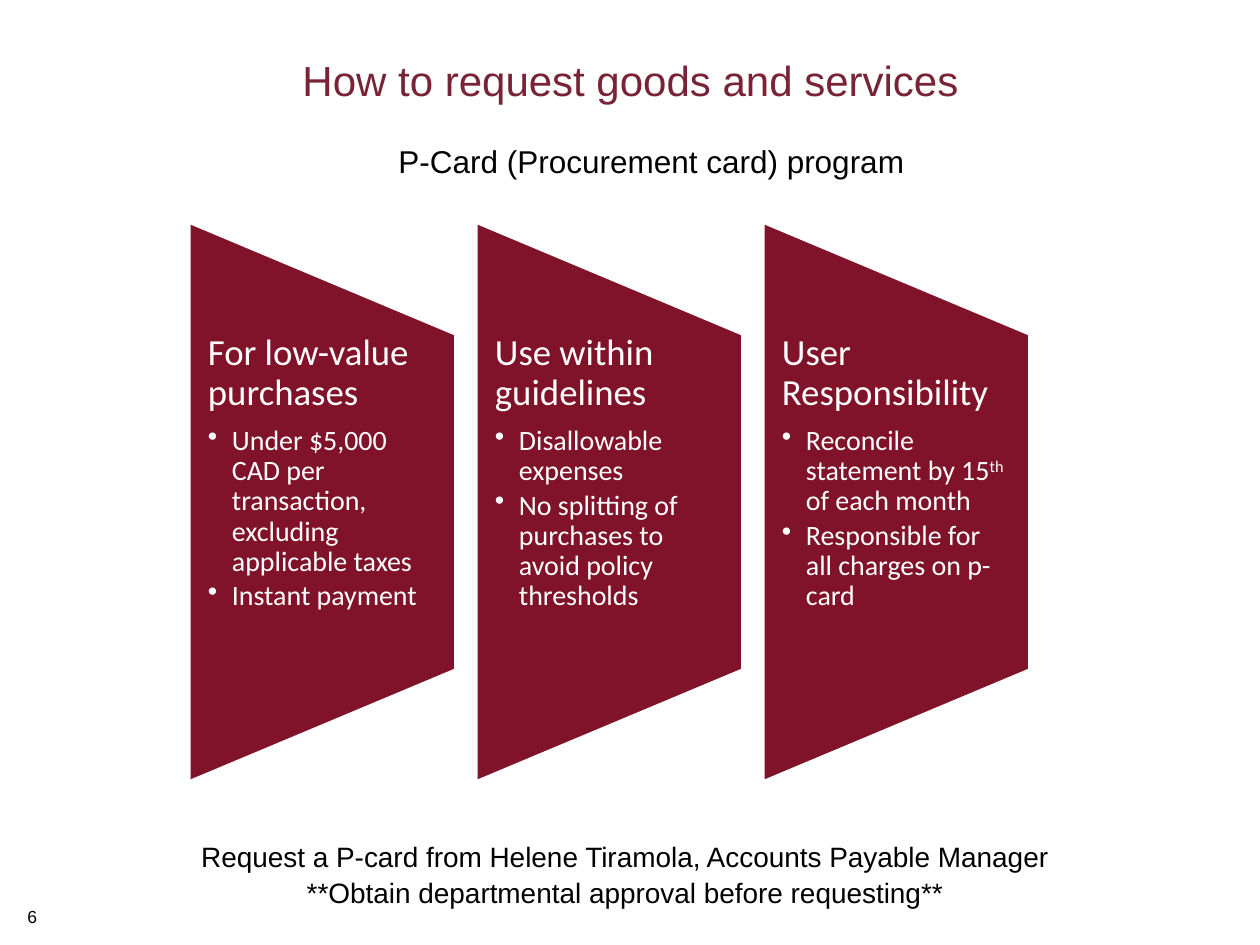
from dataclasses import dataclass

from lxml.etree import SubElement
from pptx import Presentation
from pptx.dml.color import RGBColor
from pptx.enum.shapes import MSO_SHAPE
from pptx.enum.text import MSO_ANCHOR, PP_ALIGN
from pptx.oxml.ns import qn
from pptx.util import Emu, Pt

PX = 914400 / 126
BLACK = RGBColor(0x00, 0x00, 0x00)
WHITE = RGBColor(0xFF, 0xFF, 0xFF)
MAROON = RGBColor(0x80, 0x13, 0x29)
WINE = RGBColor(0x78, 0x23, 0x36)

PANEL_LEFT, PANEL_PITCH, PANEL_WIDTH = 189, 287, 267
PANEL_HEIGHT, PANEL_MIDDLE = 560, 502
COPY_TOP, COPY_HEIGHT, COPY_INSET = 334, 336, 19
BULLET_INDENT = 24


@dataclass(frozen=True)
class Style:
    size: int
    color: RGBColor
    font: str = "Arial"


@dataclass(frozen=True)
class Span:
    text: str
    baseline: int = 0


@dataclass(frozen=True)
class Panel:
    heading: str
    bullets: tuple[tuple[Span, ...], ...]


HEADING = Style(21, WHITE, "Calibri")
BULLET = Style(16, WHITE, "Calibri")

PANELS = (
    Panel("For low-value purchases", (
        (Span("Under $5,000 CAD per transaction, excluding applicable taxes"),),
        (Span("Instant payment"),),
    )),
    Panel("Use within guidelines", (
        (Span("Disallowable expenses"),),
        (Span("No splitting of purchases to avoid policy thresholds"),),
    )),
    Panel("User Responsibility", (
        (Span("Reconcile statement by 15"), Span("th", 30), Span(" of each month")),
        (Span("Responsible for all charges on p-card"),),
    )),
)


def px(length: float) -> Emu:
    return Emu(round(length * PX))


def add_frame(slide, left: int, top: int, width: int, height: int,
              anchor=MSO_ANCHOR.TOP):
    frame = slide.shapes.add_textbox(px(left), px(top), px(width), px(height)).text_frame
    frame.word_wrap = True
    frame.vertical_anchor = anchor
    return frame


def set_insets(frame, side: int) -> None:
    frame.margin_left = frame.margin_right = px(side)
    frame.margin_top = frame.margin_bottom = 0


def write(paragraph, spans: tuple[Span, ...], style: Style, align=PP_ALIGN.LEFT) -> None:
    paragraph.alignment = align
    for span in spans:
        run = paragraph.add_run()
        run.text = span.text
        run.font.name = style.font
        run.font.size = Pt(style.size)
        run.font.color.rgb = style.color
        if span.baseline:
            run.font._element.set("baseline", str(span.baseline * 1000))


def add_bullet(paragraph) -> None:
    properties = paragraph._p.get_or_add_pPr()
    properties.set("marL", str(px(BULLET_INDENT)))
    properties.set("indent", str(-px(BULLET_INDENT)))
    SubElement(properties, qn("a:buChar")).set("char", "•")


def add_panel(slide, left: int, panel: Panel) -> None:
    trapezoid = slide.shapes.add_shape(
        MSO_SHAPE.FLOWCHART_MANUAL_OPERATION,
        px(left + (PANEL_WIDTH - PANEL_HEIGHT) / 2), px(PANEL_MIDDLE - PANEL_WIDTH / 2),
        px(PANEL_HEIGHT), px(PANEL_WIDTH))
    trapezoid.rotation = 270
    trapezoid.shadow.inherit = False
    trapezoid.fill.solid()
    trapezoid.fill.fore_color.rgb = MAROON
    trapezoid.line.color.rgb = WHITE
    trapezoid.line.width = Pt(2)

    frame = add_frame(slide, left, COPY_TOP, PANEL_WIDTH, COPY_HEIGHT)
    set_insets(frame, COPY_INSET)
    heading = frame.paragraphs[0]
    heading.line_spacing = 0.9
    heading.space_after = Pt(7.35)
    write(heading, (Span(panel.heading),), HEADING)
    for spans in panel.bullets:
        bullet = frame.add_paragraph()
        bullet.level = 1
        add_bullet(bullet)
        bullet.line_spacing = 0.9
        bullet.space_after = Pt(2.4)
        write(bullet, spans, BULLET)


def main() -> None:
    deck = Presentation()
    deck.slide_width, deck.slide_height = px(1260), px(945)
    slide = deck.slides.add_slide(deck.slide_layouts[6])

    number = add_frame(slide, 15, 900, 110, 34)
    write(number.paragraphs[0], (Span("6"),), Style(10, BLACK))
    program = add_frame(slide, 116, 136, 1071, 50, MSO_ANCHOR.MIDDLE)
    write(program.paragraphs[0], (Span("P-Card (Procurement card) program"),),
          Style(18, BLACK), PP_ALIGN.CENTER)
    title = add_frame(slide, 95, 53, 1071, 53, MSO_ANCHOR.MIDDLE)
    write(title.paragraphs[0], (Span("How to request goods and services"),),
          Style(24, WINE), PP_ALIGN.CENTER)

    for index, panel in enumerate(PANELS):
        add_panel(slide, PANEL_LEFT + index * PANEL_PITCH, panel)

    footer = add_frame(slide, 42, 840, 1166, 95)
    set_insets(footer, 0)
    request = footer.paragraphs[0]
    approval = footer.add_paragraph()
    approval.space_before = Pt(1)
    for paragraph, text in (
        (request, "Request a P-card from Helene Tiramola, Accounts Payable Manager"),
        (approval, "**Obtain departmental approval before requesting**"),
    ):
        write(paragraph, (Span(text),), Style(16, BLACK), PP_ALIGN.CENTER)

    deck.save("out.pptx")


if __name__ == "__main__":
    main()
